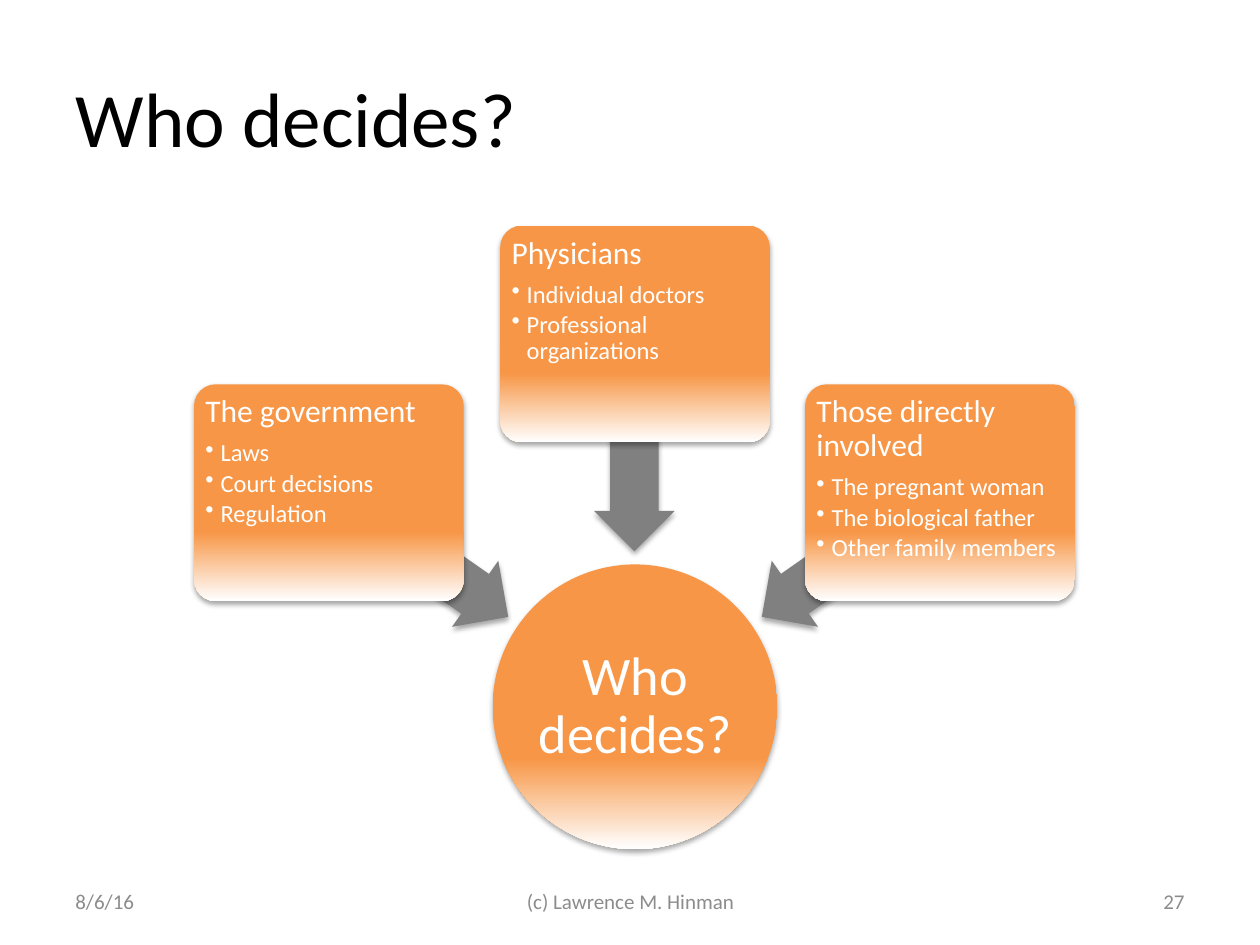
from dataclasses import dataclass

from lxml import etree
from pptx import Presentation
from pptx.dml.color import RGBColor
from pptx.enum.shapes import MSO_SHAPE
from pptx.enum.text import MSO_ANCHOR, PP_ALIGN
from pptx.oxml.ns import qn
from pptx.shapes.autoshape import Shape
from pptx.slide import Slide
from pptx.text.text import TextFrame, _Paragraph
from pptx.util import Inches, Pt

COLORS = {
    "title": "000000",
    "accent": "F79646",
    "light": "FFFFFF",
    "arrow": "808080",
    "footer": "8C8C8C",
    "shadow": "000000",
}
FONT = "Calibri"
BOX_WIDTH, BOX_HEIGHT = 2.14, 1.72
ARROW_WIDTH, ARROW_HEIGHT = 1.73, 0.64
HUB_LEFT, HUB_TOP, HUB_SIZE = 3.91, 4.48, 2.26
HEADING_SIZE, BULLET_SIZE = 18, 14


@dataclass
class Party:
    heading: str
    points: list[str]
    left: float
    top: float
    arrow_left: float
    arrow_top: float
    arrow_rotation: int


@dataclass
class FooterItem:
    text: str
    left: float
    width: float
    alignment: PP_ALIGN


PARTIES = [
    Party("The government", ["Laws", "Court decisions", "Regulation"],
          1.54, 3.05, 2.46, 4.08, 215),
    Party("Physicians", ["Individual doctors", "Professional organizations"],
          3.97, 1.79, 4.17, 3.19, 270),
    Party("Those directly involved",
          ["The pregnant woman", "The biological father", "Other family members"],
          6.39, 3.05, 5.89, 4.08, 325),
]
FOOTER = [
    FooterItem("8/6/16", 0.5, 2.33, PP_ALIGN.LEFT),
    FooterItem("(c) Lawrence M. Hinman", 3.42, 3.17, PP_ALIGN.CENTER),
    FooterItem("27", 7.17, 2.33, PP_ALIGN.RIGHT),
]


def rgb(role: str) -> RGBColor:
    return RGBColor.from_string(COLORS[role])


def style(paragraph: _Paragraph, size: float, role: str, alignment: PP_ALIGN) -> None:
    paragraph.alignment = alignment
    paragraph.font.name = FONT
    paragraph.font.size = Pt(size)
    paragraph.font.color.rgb = rgb(role)


def add_bullet(paragraph: _Paragraph) -> None:
    properties = paragraph._p.get_or_add_pPr()
    properties.set("marL", str(Inches(0.12)))
    properties.set("indent", str(Inches(-0.12)))
    etree.SubElement(properties, qn("a:buChar"), char="•")


def add_shadow(shape: Shape) -> None:
    shape.shadow.inherit = False
    effects = shape._element.spPr.find(qn("a:effectLst"))
    shadow = etree.SubElement(
        effects, qn("a:outerShdw"), blurRad=str(Pt(3.1)), dist=str(Pt(1.8)),
        dir="5400000", rotWithShape="0")
    color = etree.SubElement(shadow, qn("a:srgbClr"), val=COLORS["shadow"])
    etree.SubElement(color, qn("a:alpha"), val="35000")


def add_preset(slide: Slide, preset: MSO_SHAPE, left: float, top: float,
               width: float, height: float) -> Shape:
    shape = slide.shapes.add_shape(
        preset, Inches(left), Inches(top), Inches(width), Inches(height))
    shape.line.fill.background()
    add_shadow(shape)
    return shape


def fill_fading(shape: Shape) -> None:
    shape.fill.gradient()
    shape.fill.gradient_angle = 270
    stops = shape.fill.gradient_stops
    for stop, position, role in zip(stops, (0.68, 1), ("accent", "light")):
        stop.position = position
        stop.color.rgb = rgb(role)


def prepare_frame(frame: TextFrame, inset: float, anchor: MSO_ANCHOR) -> None:
    frame.word_wrap = True
    frame.vertical_anchor = anchor
    frame.margin_left = frame.margin_right = Inches(inset)
    frame.margin_top = frame.margin_bottom = Inches(inset)


def add_hub(slide: Slide) -> None:
    hub = add_preset(slide, MSO_SHAPE.OVAL, HUB_LEFT, HUB_TOP, HUB_SIZE, HUB_SIZE)
    fill_fading(hub)
    prepare_frame(hub.text_frame, 0.02, MSO_ANCHOR.MIDDLE)
    question = hub.text_frame.paragraphs[0]
    question.text = "Who decides?"
    question.line_spacing = 0.9
    style(question, 31, "light", PP_ALIGN.CENTER)


def add_party(slide: Slide, party: Party) -> None:
    arrow = add_preset(slide, MSO_SHAPE.LEFT_ARROW, party.arrow_left,
                       party.arrow_top, ARROW_WIDTH, ARROW_HEIGHT)
    arrow.adjustments[0] = 0.6
    arrow.adjustments[1] = 0.5
    arrow.rotation = party.arrow_rotation
    arrow.fill.solid()
    arrow.fill.fore_color.rgb = rgb("arrow")

    box = add_preset(slide, MSO_SHAPE.ROUNDED_RECTANGLE, party.left, party.top,
                     BOX_WIDTH, BOX_HEIGHT)
    box.adjustments[0] = 0.1
    fill_fading(box)
    frame = box.text_frame
    prepare_frame(frame, 0.04, MSO_ANCHOR.TOP)
    heading = frame.paragraphs[0]
    heading.text = party.heading
    heading.line_spacing = 0.9
    heading.space_after = Pt(0.35 * HEADING_SIZE)
    style(heading, HEADING_SIZE, "light", PP_ALIGN.LEFT)
    for text in party.points:
        point = frame.add_paragraph()
        point.text = text
        point.level = 1
        add_bullet(point)
        point.line_spacing = 0.9
        point.space_after = Pt(0.15 * BULLET_SIZE)
        style(point, BULLET_SIZE, "light", PP_ALIGN.LEFT)


def add_footer_item(slide: Slide, item: FooterItem) -> None:
    frame = slide.shapes.add_textbox(
        Inches(item.left), Inches(6.95), Inches(item.width), Inches(0.4)).text_frame
    frame.word_wrap = True
    frame.vertical_anchor = MSO_ANCHOR.MIDDLE
    frame.text = item.text
    style(frame.paragraphs[0], 12, "footer", item.alignment)


def main() -> None:
    presentation = Presentation()
    presentation.slide_width = Inches(10)
    presentation.slide_height = Inches(7.5)
    slide = presentation.slides.add_slide(presentation.slide_layouts[5])

    title = slide.shapes.title
    title.left, title.top = Inches(0.5), Inches(0.3)
    title.width, title.height = Inches(8.5), Inches(1.25)
    title.text_frame.text = "Who decides?"
    title.text_frame.vertical_anchor = MSO_ANCHOR.MIDDLE
    style(title.text_frame.paragraphs[0], 44, "title", PP_ALIGN.LEFT)

    add_hub(slide)
    for party in PARTIES:
        add_party(slide, party)
    for item in FOOTER:
        add_footer_item(slide, item)

    presentation.save("out.pptx")


if __name__ == "__main__":
    main()
